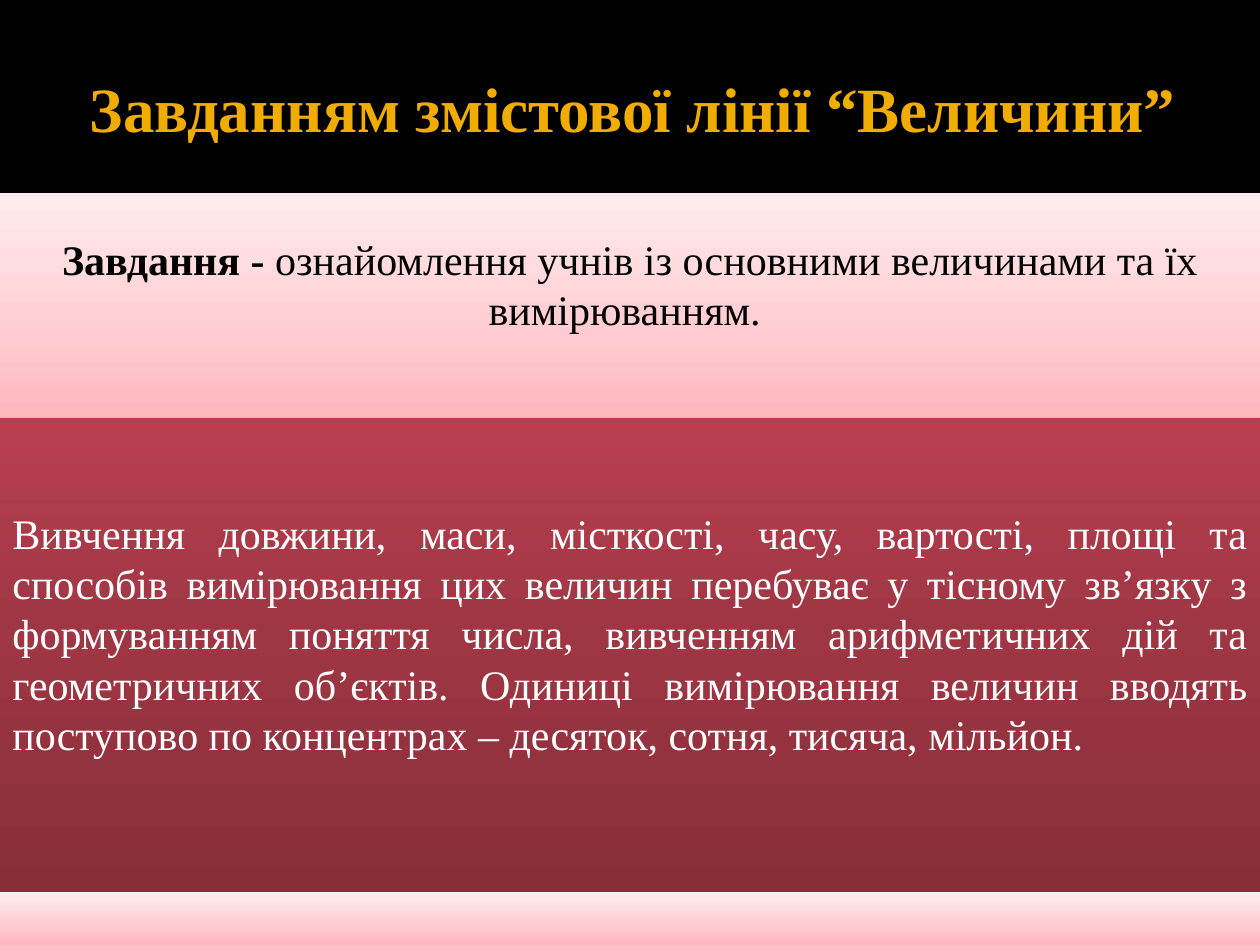
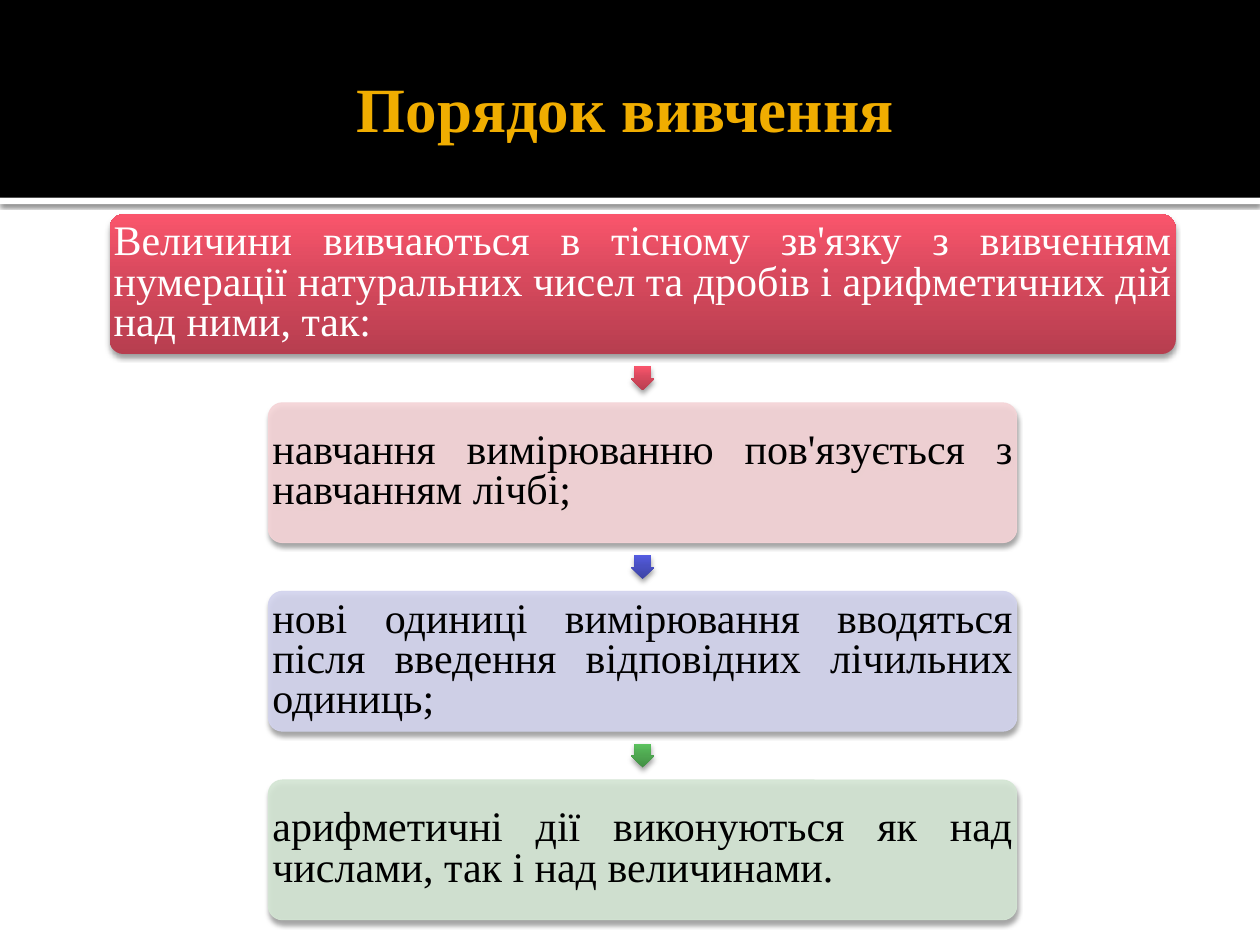
from lxml.etree import SubElement
from pptx import Presentation
from pptx.dml.color import RGBColor
from pptx.enum.shapes import MSO_SHAPE as SHAPE
from pptx.enum.text import MSO_ANCHOR as ANCHOR, PP_ALIGN as ALIGN
from pptx.oxml.ns import qn
from pptx.util import Inches, Pt

BLACK = RGBColor(0x00, 0x00, 0x00)
WHITE = RGBColor(0xFF, 0xFF, 0xFF)
GOLD = RGBColor(0xF0, 0xAD, 0x00)
PINK = RGBColor(0xF5, 0xD4, 0xD7)
LILAC = RGBColor(0xD3, 0xD4, 0xEE)
MINT = RGBColor(0xD4, 0xE6, 0xD4)
ROSE_GRAD = [(0, RGBColor(0xFF, 0xB6, 0xBD)), (35, RGBColor(0xFF, 0xCB, 0xD0)), (100, RGBColor(0xFF, 0xEB, 0xED))]
WINE_GRAD = [(0, RGBColor(0x87, 0x2E, 0x3A)), (55, RGBColor(0x9F, 0x36, 0x44)), (100, RGBColor(0xB9, 0x3F, 0x50))]
RED_GRAD = [(0, RGBColor(0xB7, 0x3E, 0x4F)), (55, RGBColor(0xD7, 0x49, 0x5D)), (100, RGBColor(0xFA, 0x55, 0x6C))]
BLUE_GRAD = [(0, RGBColor(0x3E, 0x44, 0xA5)), (55, RGBColor(0x49, 0x50, 0xC2)), (100, RGBColor(0x55, 0x5D, 0xE2))]
GREEN_GRAD = [(0, RGBColor(0x43, 0x8F, 0x45)), (55, RGBColor(0x4F, 0xA8, 0x51)), (100, RGBColor(0x5C, 0xC3, 0x5F))]
FONT = "Times New Roman"
SOFT = (38, 3.1, 2)


def add_block(s, kind, x, y, w, h, fill, shadow=None, alpha=None):
    sp = s.shapes.add_shape(kind, Inches(x), Inches(y), Inches(w), Inches(h))
    sp.line.fill.background()
    sp.shadow.inherit = False
    props = sp._element.spPr
    if isinstance(fill, list):
        sp.fill.gradient()
        sp.fill.gradient_angle = 90
        stops = props.find(".//" + qn("a:gsLst"))
        for stop in list(stops):
            stops.remove(stop)
        for pos, color in fill:
            stop = SubElement(stops, qn("a:gs"), pos=str(pos * 1000))
            SubElement(stop, qn("a:srgbClr"), val=str(color))
    else:
        sp.fill.solid()
        sp.fill.fore_color.rgb = fill
    if alpha:
        sp.line.color.rgb = fill
        sp.line.width = Pt(0.5)
        for color in props.findall(".//" + qn("a:srgbClr")):
            SubElement(color, qn("a:alpha"), val=str(alpha * 1000))
    if shadow:
        opacity, blur, dist = shadow
        outer = SubElement(props.find(qn("a:effectLst")), qn("a:outerShdw"), blurRad=str(Pt(blur)),
                           dist=str(Pt(dist)), dir="5400000", algn="ctr", rotWithShape="0")
        color = SubElement(outer, qn("a:srgbClr"), val=str(BLACK))
        SubElement(color, qn("a:alpha"), val=str(opacity * 1000))
    return sp


def write(sp, runs, color, align, insets, size=24, spacing=None):
    tf = sp.text_frame
    tf.word_wrap = True
    tf.vertical_anchor = ANCHOR.MIDDLE
    tf.margin_left, tf.margin_top, tf.margin_right, tf.margin_bottom = [Inches(i) for i in insets]
    p = tf.paragraphs[0]
    p.alignment = align
    if spacing:
        p.line_spacing = spacing
    for text, bold in runs:
        r = p.add_run()
        r.text = text
        r.font.name = FONT
        r.font.size = Pt(size)
        r.font.bold = bold
        r.font.color.rgb = color


prs = Presentation()
prs.slide_width, prs.slide_height = Inches(10), Inches(7.5)

slides = []
for title in ["Завданням змістової лінії “Величини”", "Порядок вивчення "]:
    s = prs.slides.add_slide(prs.slide_layouts[6])
    add_block(s, SHAPE.RECTANGLE, 0, 1.57, 10, 0.05, WHITE, (60, 2.5, 0.8))
    add_block(s, SHAPE.RECTANGLE, 0, 0, 10, 1.57, BLACK)
    box = s.shapes.add_textbox(Inches(0.5), Inches(0.17), Inches(9), Inches(1.37))
    write(box, [(title, True)], GOLD, ALIGN.CENTER, (0.1, 0.05, 0.05, 0.05), 36)
    slides.append(s)
task_slide, order_slide = slides

band_insets = (0.1, 0.1, 0.1, 0.45)
task = add_block(task_slide, SHAPE.RECTANGLE, 0, 1.53, 10, 1.79, ROSE_GRAD)
write(task, [("Завдання - ", True),
             ("ознайомлення учнів із основними величинами та їх вимірюванням. ", False)],
      BLACK, ALIGN.CENTER, band_insets)
study = add_block(task_slide, SHAPE.RECTANGLE, 0, 3.32, 10, 3.76, WINE_GRAD, SOFT)
write(study, [("Вивчення довжини, маси, місткості, часу, вартості, площі та способів вимірювання "
               "цих величин перебуває у тісному зв’язку з формуванням поняття числа, вивченням "
               "арифметичних дій та геометричних об’єктів. Одиниці вимірювання величин вводять "
               "поступово по концентрах – десяток, сотня, тисяча, мільйон. ", False)],
      WHITE, ALIGN.JUSTIFY, band_insets)
add_block(task_slide, SHAPE.RECTANGLE, 0, 7.08, 10, 0.42, ROSE_GRAD)

steps = [
    ("Величини вивчаються в тісному зв'язку з вивченням нумерації натуральних чисел та дробів "
     "і арифметичних дій над ними, так: ", 8.46, RED_GRAD, WHITE, None, RED_GRAD),
    ("навчання вимірюванню пов'язується з навчанням лічбі; ", 5.94, PINK, BLACK, 90, BLUE_GRAD),
    ("нові одиниці вимірювання вводяться після введення відповідних лічильних одиниць; ",
     5.94, LILAC, BLACK, 90, GREEN_GRAD),
    ("арифметичні дії виконуються як над числами, так і над величинами.", 5.94, MINT, BLACK, 90, None),
]
center, top, last_top, height, arrow = 5.1, 1.7, 6.19, 1.11, 0.19
pitch = (last_top - top) / (len(steps) - 1)
for i, (text, width, fill, color, alpha, arrow_fill) in enumerate(steps):
    y = top + i * pitch
    step = add_block(order_slide, SHAPE.ROUNDED_RECTANGLE, center - width / 2, y, width, height, fill, SOFT, alpha)
    step.adjustments[0] = 0.1
    write(step, [(text, False)], color, ALIGN.JUSTIFY, (0, 0, 0, 0), spacing=0.8)
    if arrow_fill:
        arrow_y = y + height + (pitch - height - arrow) / 2
        sp = add_block(order_slide, SHAPE.DOWN_ARROW, center - arrow / 2, arrow_y, arrow, arrow, arrow_fill, SOFT)
        sp.adjustments[0] = 0.67

prs.save("out.pptx")
